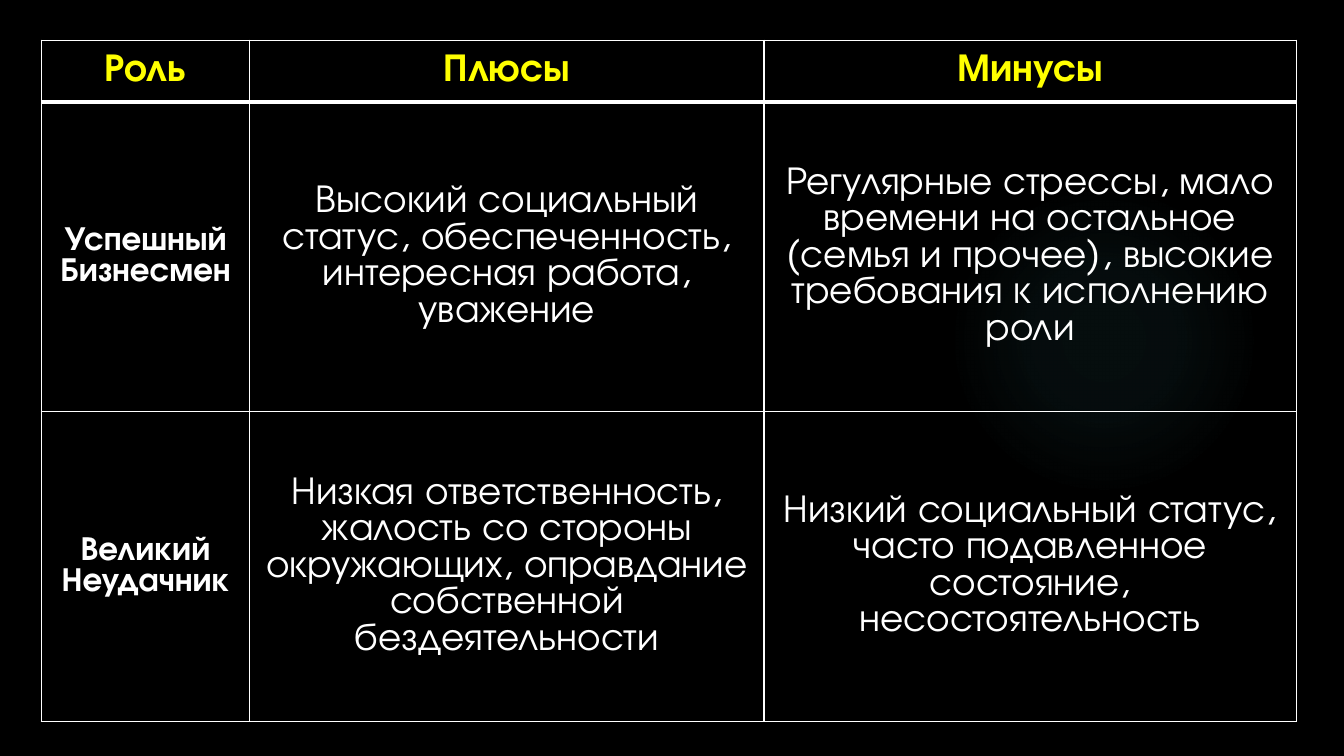
from lxml.etree import SubElement
from pptx import Presentation
from pptx.dml.color import RGBColor
from pptx.enum.shapes import MSO_SHAPE
from pptx.enum.text import MSO_ANCHOR, PP_ALIGN
from pptx.oxml import parse_xml
from pptx.oxml.ns import nsdecls, qn
from pptx.util import Pt

ROLES = [
    ("Роль", "Плюсы", "Минусы"),
    ("Успешный Бизнесмен",
     "Высокий социальный статус, обеспеченность, интересная работа, уважение",
     "Регулярные стрессы, мало времени на остальное (семья и прочее), "
     "высокие требования к исполнению роли"),
    ("Великий Неудачник",
     "Низкая ответственность, жалость со стороны окружающих, "
     "оправдание собственной бездеятельности",
     "Низкий социальный статус, часто подавленное состояние, несостоятельность"),
]
COLORS = {"background": "000000", "heading": "FFFF00", "text": "FFFFFF",
          "border": "FFFFFF", "glow": "50B9C1"}
FONT = "TeX Gyre Adventor"
COLUMN_WIDTHS = [149, 367.2, 380.2]
ROW_HEIGHTS = [44, 221.2, 221.2]
TABLE_LEFT, TABLE_TOP = 29.5, 28.8
GLOW_LEFT, GLOW_TOP, GLOW_SIZE = 677.5, 131.8, 221.8
GLOW_STOPS = [(0, 7), (36, 6), (69, 0)]
THIN, THICK = 1, 3


def rgb(name):
    return RGBColor.from_string(COLORS[name])


def add_glow(slide):
    glow = slide.shapes.add_shape(MSO_SHAPE.OVAL, Pt(GLOW_LEFT), Pt(GLOW_TOP),
                                  Pt(GLOW_SIZE), Pt(GLOW_SIZE))
    glow.shadow.inherit = False
    glow.line.fill.background()
    glow.fill.background()
    stops = "".join(
        f'<a:gs pos="{position * 1000}"><a:srgbClr val="{COLORS["glow"]}">'
        f'<a:alpha val="{opacity * 1000}"/></a:srgbClr></a:gs>'
        for position, opacity in GLOW_STOPS)
    gradient = parse_xml(
        f'<a:gradFill {nsdecls("a")} rotWithShape="1"><a:gsLst>{stops}</a:gsLst>'
        '<a:path path="circle"><a:fillToRect l="50000" t="50000" r="50000" b="50000"/>'
        '</a:path></a:gradFill>')
    properties = glow.element.spPr
    properties.replace(properties.find(qn("a:noFill")), gradient)


def add_borders(cell, row):
    widths = {"lnL": THIN, "lnR": THIN,
              "lnT": THICK if row == 1 else THIN,
              "lnB": THICK if row == 0 else THIN}
    properties = cell._tc.get_or_add_tcPr()
    for side, width in widths.items():
        border = SubElement(properties, qn(f"a:{side}"), w=str(Pt(width)))
        fill = SubElement(border, qn("a:solidFill"))
        SubElement(fill, qn("a:srgbClr"), val=COLORS["border"])


def fill_cell(cell, text, row, column):
    add_borders(cell, row)
    cell.fill.background()
    cell.vertical_anchor = MSO_ANCHOR.MIDDLE
    cell.margin_left = cell.margin_right = Pt(5.1)
    cell.margin_top = cell.margin_bottom = 0
    paragraph = cell.text_frame.paragraphs[0]
    paragraph.alignment = PP_ALIGN.CENTER
    run = paragraph.add_run()
    run.text = text
    run.font.name = FONT
    run.font.size = Pt(24 if row and column == 0 else 28)
    run.font.bold = row == 0 or column == 0
    run.font.color.rgb = rgb("text" if row else "heading")


def add_roles_table(slide):
    frame = slide.shapes.add_table(
        len(ROLES), len(COLUMN_WIDTHS), Pt(TABLE_LEFT), Pt(TABLE_TOP),
        Pt(sum(COLUMN_WIDTHS)), Pt(sum(ROW_HEIGHTS)))
    table = frame.table
    table.horz_banding = False
    for column, width in zip(table.columns, COLUMN_WIDTHS):
        column.width = Pt(width)
    for row, height in zip(table.rows, ROW_HEIGHTS):
        row.height = Pt(height)
    for row, texts in enumerate(ROLES):
        for column, text in enumerate(texts):
            fill_cell(table.cell(row, column), text, row, column)


def main():
    deck = Presentation()
    deck.slide_width, deck.slide_height = Pt(960), Pt(540)
    slide = deck.slides.add_slide(deck.slide_layouts[6])
    slide.background.fill.solid()
    slide.background.fill.fore_color.rgb = rgb("background")
    add_glow(slide)
    add_roles_table(slide)
    deck.save("out.pptx")


if __name__ == "__main__":
    main()
